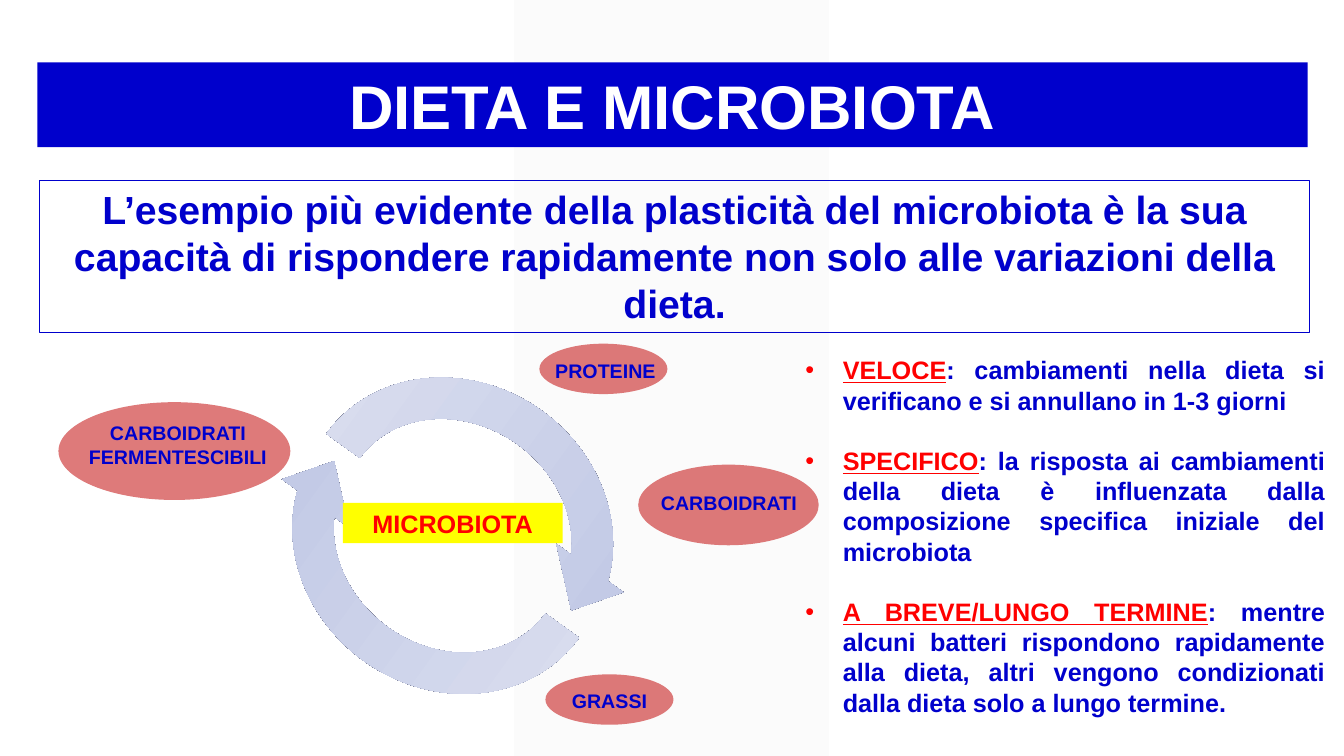
from copy import deepcopy

from pptx import Presentation
from pptx.dml.color import RGBColor
from pptx.enum import shapes, text
from pptx.oxml import ns, xmlchemy
from pptx.util import Inches, Pt

HUES = {"blue": "0000CC", "red": "FF0000", "white": "FFFFFF",
        "yellow": "FFFF00", "band": "F2F2F2", "food": "C00000",
        "dark": "121429", "mid": "C3CAE6", "pale": "E2E5F2"}
KIND = shapes.MSO_SHAPE
ALIGN = text.PP_ALIGN

FOODS = [
    ((5.41, 6.69, 1.27, 0.5), (5, 6.79, 2.09, 0.34), ["GRASSI"]),
    ((0.58, 3.99, 2.3, 0.97), (0.72, 4.13, 2.09, 0.57),
     ["CARBOIDRATI", "FERMENTESCIBILI"]),
    ((5.35, 3.41, 1.27, 0.5), (4.96, 3.51, 2.09, 0.34), ["PROTEINE"]),
    ((6.33, 4.61, 1.79, 0.8), (6.45, 4.82, 1.56, 0.34), ["CARBOIDRATI"]),
]
TRAITS = [
    ("VELOCE", ": cambiamenti nella dieta si verificano e si annullano "
     "in 1-3 giorni "),
    ("SPECIFICO", ": la risposta ai cambiamenti della dieta è influenzata "
     "dalla composizione specifica iniziale del microbiota"),
    ("A BREVE/LUNGO TERMINE", ": mentre alcuni batteri rispondono "
     "rapidamente alla dieta, altri vengono condizionati dalla dieta solo "
     "a lungo termine."),
]


def rgb(hue):
    """Return the named colour."""
    return RGBColor.from_string(HUES[hue])


def add_run(para, words, size, hue, under=False):
    """Add one bold run to a paragraph."""
    run = para.add_run()
    run.text = words
    font = run.font
    font.name, font.size, font.bold = "Arial", Pt(size), True
    font.underline = under
    font.color.rgb = rgb(hue)


def add_shape(slide, kind, box, fill=None, alpha=None, line=None):
    """Add a preset shape with a plain fill and an optional line."""
    shape = slide.shapes.add_shape(kind, *map(Inches, box))
    shape.shadow.inherit = False
    if fill:
        shape.fill.solid()
        shape.fill.fore_color.rgb = rgb(fill)
    else:
        shape.fill.background()
    if alpha:
        tone = shape._element.spPr.find(".//" + ns.qn("a:srgbClr"))
        xmlchemy.OxmlElement("a:alpha")
        node = xmlchemy.OxmlElement("a:alpha")
        node.set("val", str(alpha * 1000))
        tone.append(node)
    if line:
        shape.line.color.rgb = rgb(line)
        shape.line.width = Pt(0.75)
    else:
        shape.line.fill.background()
    return shape


def write(shape, lines, size, hue):
    """Write centred lines from the top of a shape."""
    frame = shape.text_frame
    frame.word_wrap = True
    frame.vertical_anchor = text.MSO_ANCHOR.TOP
    for i, words in enumerate(lines):
        para = frame.add_paragraph() if i else frame.paragraphs[0]
        para.alignment = ALIGN.CENTER
        add_run(para, words, size, hue)


def add_arrow(slide, left, top, turn):
    """Add one shaded half of the cycle."""
    shape = add_shape(slide, KIND.CIRCULAR_ARROW, (left, top, 3.61, 3.28))
    shape.rotation = turn
    fill = shape.fill
    fill.gradient()
    fill.gradient_angle = 180
    stops = shape._element.spPr.find(".//" + ns.qn("a:gsLst"))
    stops.append(deepcopy(stops[-1]))
    shades = ((0, "dark"), (0.25, "mid"), (1, "pale"))
    for stop, (place, hue) in zip(fill.gradient_stops, shades):
        stop.position = place
        stop.color.rgb = rgb(hue)


def add_food(slide, oval, box, lines):
    """Add a food group: an oval and its label."""
    add_shape(slide, KIND.OVAL, oval, "food", 52)
    label = slide.shapes.add_textbox(*map(Inches, box))
    write(label, lines, 14, "blue")


def add_bullet(para):
    """Give a paragraph a red bullet and a hanging indent."""
    props = para._p.get_or_add_pPr()
    props.set("marL", str(Inches(0.37)))
    props.set("indent", str(Inches(-0.37)))
    tint = xmlchemy.OxmlElement("a:buClr")
    tone = xmlchemy.OxmlElement("a:srgbClr")
    tone.set("val", HUES["red"])
    tint.append(tone)
    face = xmlchemy.OxmlElement("a:buFont")
    face.set("typeface", "Arial")
    mark = xmlchemy.OxmlElement("a:buChar")
    mark.set("char", "•")
    props.extend([tint, face, mark])


def add_traits(slide, box):
    """Add the justified list of traits."""
    frame = slide.shapes.add_textbox(*map(Inches, box)).text_frame
    frame.word_wrap = True
    for i, (term, words) in enumerate(TRAITS):
        para = frame.add_paragraph() if i else frame.paragraphs[0]
        para.alignment = ALIGN.JUSTIFY
        para.space_before = Pt(21.5 if i else 0)
        add_bullet(para)
        add_run(para, term, 18, "red", True)
        add_run(para, words, 18, "blue")


def main():
    """Build the slide and save it."""
    deck = Presentation()
    deck.slide_width, deck.slide_height = Inches(13.33), Inches(7.5)
    slide = deck.slides.add_slide(deck.slide_layouts[6])

    band = add_shape(slide, KIND.PARALLELOGRAM, (5.1, 0, 3.12, 7.5),
                     "band", 30)
    band.adjustments[0] = 0
    claim = add_shape(slide, KIND.RECTANGLE, (0.39, 1.79, 12.6, 1.51),
                      line="blue")
    write(claim, ["L’esempio più evidente della plasticità del microbiota "
                  "è la sua capacità di rispondere rapidamente non solo "
                  "alle variazioni della dieta."], 28, "blue")
    title = add_shape(slide, KIND.RECTANGLE, (0.37, 0.62, 12.6, 0.84), "blue")
    write(title, ["DIETA E MICROBIOTA"], 44, "white")

    add_arrow(slide, 2.73, 3.6, 35.8)
    add_arrow(slide, 2.64, 3.75, 215.8)
    for food in FOODS:
        add_food(slide, *food)
    core = add_shape(slide, KIND.RECTANGLE, (3.4, 4.99, 2.18, 0.4), "yellow")
    write(core, ["MICROBIOTA"], 18, "red")
    add_traits(slide, (7.89, 3.47, 5.35, 3.74))
    deck.save("out.pptx")


if __name__ == "__main__":
    main()
